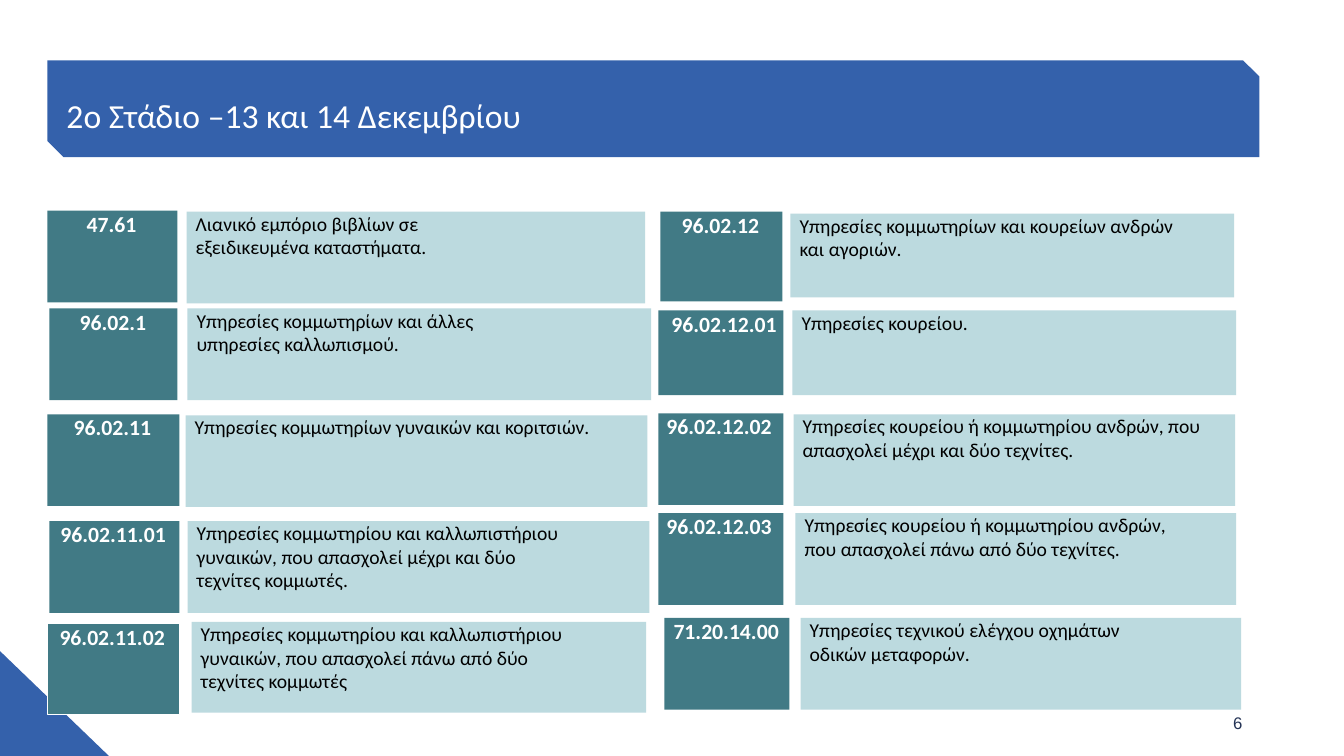
import pptx
import pptx.util
import pptx.dml.color
import pptx.enum.shapes
import pptx.enum.text

Inches = pptx.util.Inches
Shape = pptx.enum.shapes.MSO_SHAPE

COLORS = {
    "blue": "3461AB",
    "teal": "417A85",
    "pale": "BCDADF",
    "white": "FFFFFF",
    "black": "000000",
    "navy": "243355",
}

# Each entry: code, its (left, top, width, height) and indent;
# description paragraphs, their (left, top, width, height) and right margin.
ACTIVITIES = [
    ("47.61", (0.47, 2.09, 1.29, 0.91), 0.39,
     ["Λιανικό εμπόριο βιβλίων σε εξειδικευμένα καταστήματα."],
     (1.85, 2.1, 4.55, 0.91), 1.9),
    ("96.02.1", (0.49, 3.06, 1.27, 0.91), 0.3,
     ["Υπηρεσίες κομμωτηρίων και άλλες υπηρεσίες καλλωπισμού."],
     (1.86, 3.06, 4.6, 0.91), 1.4),
    ("96.02.11", (0.47, 4.11, 1.31, 0.91), 0.26,
     ["Υπηρεσίες κομμωτηρίων γυναικών και κοριτσιών."],
     (1.84, 4.12, 4.58, 0.91), 0.2),
    ("96.02.11.01", (0.49, 5.17, 1.29, 0.91), 0.11,
     ["Υπηρεσίες κομμωτηρίου και καλλωπιστήριου γυναικών, που απασχολεί "
      "μέχρι και δύο τεχνίτες κομμωτές."],
     (1.86, 5.17, 4.58, 0.91), 0.72),
    ("96.02.11.02", (0.47, 6.19, 1.31, 0.9), 0.12,
     ["Υπηρεσίες κομμωτηρίου και καλλωπιστήριου γυναικών, που απασχολεί "
      "πάνω από δύο τεχνίτες κομμωτές"],
     (1.9, 6.17, 4.51, 0.9), 0.62),
    ("96.02.12", (6.55, 2.1, 1.21, 0.89), 0.21,
     ["Υπηρεσίες κομμωτηρίων και κουρείων ανδρών και αγοριών."],
     (7.84, 2.12, 4.4, 0.83), 0.42),
    ("96.02.12.01", (6.53, 3.08, 1.24, 0.84), 0.13,
     ["Υπηρεσίες κουρείου."],
     (7.86, 3.08, 4.4, 0.84), 0.2),
    ("96.02.12.02", (6.53, 4.1, 1.24, 0.91), 0.08,
     ["Υπηρεσίες κουρείου ή κομμωτηρίου ανδρών, που",
      "απασχολεί μέχρι και δύο τεχνίτες."],
     (7.87, 4.11, 4.38, 0.91), 0.1),
    ("96.02.12.03", (6.53, 5.09, 1.24, 0.91), 0.08,
     ["Υπηρεσίες κουρείου ή κομμωτηρίου ανδρών, που απασχολεί "
      "πάνω από δύο τεχνίτες."],
     (7.89, 5.09, 4.37, 0.91), 0.5),
    ("71.20.14.00", (6.59, 6.13, 1.24, 0.91), 0.09,
     ["Υπηρεσίες τεχνικού ελέγχου οχημάτων οδικών μεταφορών."],
     (7.94, 6.13, 4.37, 0.91), 0.9),
]


class SlideBuilder:
    def __init__(self, slide):
        self.slide = slide

    def color(self, name):
        return pptx.dml.color.RGBColor.from_string(COLORS[name])

    def panel(self, box, fill, kind=Shape.RECTANGLE):
        panel = self.slide.shapes.add_shape(kind, *map(Inches, box))
        panel.shadow.inherit = False
        panel.fill.solid()
        panel.fill.fore_color.rgb = self.color(fill)
        panel.line.fill.background()
        return panel

    def set_text(self, holder, paragraphs, size, color, indent, right=0,
                 bold=False, wrap=True, font="Calibri"):
        """Put left-aligned, top-anchored text into a shape or text box."""
        frame = holder.text_frame
        frame.margin_left, frame.margin_right = Inches(indent), Inches(right)
        frame.margin_top = frame.margin_bottom = 0
        frame.vertical_anchor = pptx.enum.text.MSO_ANCHOR.TOP
        frame.word_wrap = wrap
        frame.text = "\n".join(paragraphs)
        for paragraph in frame.paragraphs:
            paragraph.alignment = pptx.enum.text.PP_ALIGN.LEFT
            paragraph.font.name = font
            paragraph.font.size = pptx.util.Pt(size)
            paragraph.font.bold = bold
            paragraph.font.color.rgb = self.color(color)

    def label(self, box, text, size, color, indent, font="Calibri"):
        label = self.slide.shapes.add_textbox(*map(Inches, box))
        self.set_text(label, [text], size, color, indent, font=font)

    def activity(self, code, code_box, indent, description, box, right):
        """Draw one code cell with its description beside it."""
        code_cell = self.panel(code_box, "teal")
        self.set_text(code_cell, [code], 15.5, "white", indent, bold=True, wrap=False)
        if code == "96.02.11.02":  # overlaps the corner, so it is outlined
            code_cell.line.color.rgb = self.color("white")
            code_cell.line.width = pptx.util.Pt(0.75)
        self.set_text(self.panel(box, "pale"), description, 14, "black", 0.09, right)


def main():
    deck = pptx.Presentation()
    deck.slide_width, deck.slide_height = Inches(13.33), Inches(7.5)
    builder = SlideBuilder(deck.slides.add_slide(deck.slide_layouts[6]))

    builder.panel((0, 6.46, 1.08, 1.04), "blue", Shape.RIGHT_TRIANGLE)
    builder.panel((0.47, 0.6, 12.02, 0.96), "blue", Shape.SNIP_2_DIAG_RECTANGLE)
    builder.label((0.65, 0.94, 11.8, 0.4), "2o Στάδιο –13 και 14 Δεκεμβρίου",
                  24, "white", 0.01)
    for activity in ACTIVITIES:
        builder.activity(*activity)
    builder.label((12.2, 7.07, 0.15, 0.2), "6", 12, "navy", 0.03, font="Arial")

    deck.save("out.pptx")


if __name__ == "__main__":
    main()
